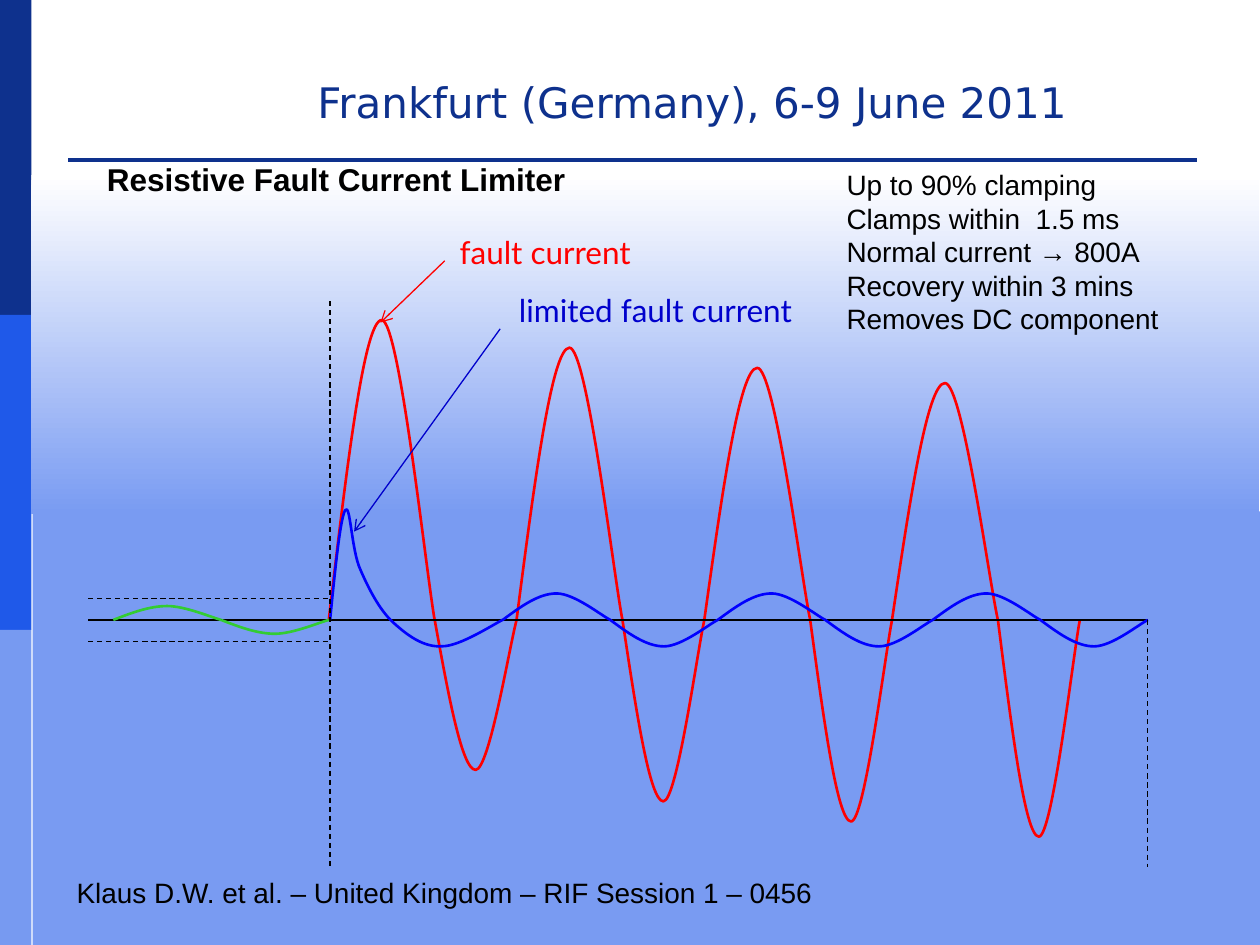
from dataclasses import dataclass
from itertools import chain

from lxml.etree import SubElement
from pptx import Presentation
from pptx.dml.color import RGBColor
from pptx.enum.dml import MSO_LINE
from pptx.enum.shapes import MSO_CONNECTOR, MSO_SHAPE
from pptx.oxml.ns import qn
from pptx.util import Inches, Pt

NAVY = RGBColor(0x0E, 0x31, 0x8D)
ROYAL = RGBColor(0x1F, 0x59, 0xE9)
SKY = RGBColor(0x77, 0x9A, 0xF1)
PANEL = RGBColor(0x79, 0x9B, 0xF2)
WHITE = RGBColor(0xFF, 0xFF, 0xFF)
BLACK = RGBColor(0, 0, 0)
RED = RGBColor(0xFF, 0, 0)
BLUE = RGBColor(0, 0, 0xFF)
DARK_BLUE = RGBColor(0, 0, 0xCC)
GREEN = RGBColor(0x33, 0xCC, 0x33)

BASE = 4.92
FAULT_X = 2.62
START_X, END_X = 0.7, 9.11
Point = tuple[float, float]


@dataclass
class Box:
    left: float
    top: float
    width: float
    height: float

    def emu(self) -> list[int]:
        return [Inches(v) for v in (self.left, self.top, self.width, self.height)]


@dataclass
class Label:
    box: Box
    text: str
    size: int
    font: str
    color: RGBColor
    bold: bool = False


@dataclass
class Line:
    start: Point
    end: Point
    color: RGBColor = BLACK
    width: float = 0.75
    dashed: bool = False
    arrow: bool = False


@dataclass
class HalfWave:
    left: float
    width: float
    peak: float
    color: RGBColor

    def points(self) -> list[Point]:
        steps = [(0, 0), (1 / 6, 1 / 2), (1 / 3, 1), (1 / 2, 1),
                 (2 / 3, 1), (11 / 12, 1 / 6), (1, 0)]
        return [(self.left + self.width * x, BASE + (self.peak - BASE) * y)
                for x, y in steps]


LABELS = [
    Label(Box(2.42, 0.56, 6.58, 0.5), "Frankfurt (Germany), 6-9 June 2011",
          24, "DejaVu Sans", NAVY),
    Label(Box(0.51, 6.9, 7.88, 0.37),
          "Klaus D.W. et al. – United Kingdom – RIF Session 1 – 0456",
          16, "Arial", BLACK),
    Label(Box(3.55, 1.8, 1.69, 0.4), "fault current", 18, "Lato", RED),
    Label(Box(4.02, 2.26, 2.58, 0.4), "limited fault current", 18, "Lato", DARK_BLUE),
    Label(Box(6.62, 1.28, 3.38, 1.45),
          "Up to 90% clamping\nClamps within  1.5 ms\nNormal current → 800A\n"
          "Recovery within 3 mins\nRemoves DC component", 16, "Arial", BLACK),
    Label(Box(0.75, 1.22, 5.35, 0.4), "Resistive Fault Current Limiter",
          18, "Arial", BLACK, True),
]

AXIS = Line((START_X, BASE), (END_X, BASE), width=1.5)
GUIDES = [
    Line((FAULT_X, 2.39), (FAULT_X, 6.88), dashed=True),
    Line((START_X, 4.75), (FAULT_X, 4.75), dashed=True),
    Line((START_X, 5.09), (FAULT_X, 5.09), dashed=True),
    Line((END_X, BASE), (END_X, 6.88), dashed=True),
]
POINTERS = [
    Line((3.53, 2.07), (3.02, 2.56), RED, arrow=True),
    Line((3.97, 2.61), (2.81, 4.22), DARK_BLUE, arrow=True),
]

FAULT_PEAKS = [(2.54, 6.11), (2.76, 6.36), (2.92, 6.52), (3.04, 6.64)]
FAULT_PERIOD, FAULT_RISE = 1.49, 0.84
FAULT_WAVES = list(chain.from_iterable(
    (HalfWave(2.61 + FAULT_PERIOD * i, FAULT_RISE, high, RED),
     HalfWave(2.61 + FAULT_PERIOD * i + FAULT_RISE, FAULT_PERIOD - FAULT_RISE, low, RED))
    for i, (high, low) in enumerate(FAULT_PEAKS)))
TRANSIENT = [
    (2.62, 4.92), (2.66, 4.52), (2.7, 4.12), (2.74, 4.05), (2.78, 3.98),
    (2.79, 4.37), (2.86, 4.52), (2.92, 4.66), (3.01, 4.84), (3.12, 4.94),
    (3.23, 5.04), (3.36, 5.14), (3.51, 5.13), (3.65, 5.13), (3.91, 4.96), (3.99, 4.92),
]


def sine(left: float, right: float, count: int, height: float,
         color: RGBColor) -> list[HalfWave]:
    width = (right - left) / count
    return [HalfWave(left + width * i, width, BASE - height * (-1) ** i, color)
            for i in range(count)]


def add_rect(shapes, box: Box, color: RGBColor):
    sp = shapes.add_shape(MSO_SHAPE.RECTANGLE, *box.emu())
    sp.shadow.inherit = False
    sp.line.fill.background()
    sp.fill.solid()
    sp.fill.fore_color.rgb = color
    return sp


def add_fade(shapes, box: Box, top: RGBColor, bottom: RGBColor) -> None:
    fill = add_rect(shapes, box, top).fill
    fill.gradient()
    fill.gradient_angle = 270
    for stop, color in zip(fill.gradient_stops, (top, bottom)):
        stop.color.rgb = color


def add_rule(shapes, box: Box, color: RGBColor) -> None:
    table = shapes.add_table(1, 1, *box.emu()).table
    table.first_row = table.horz_banding = False
    cell = table.cell(0, 0)
    cell.margin_left = cell.margin_right = cell.margin_top = cell.margin_bottom = 0
    SubElement(cell.text_frame.paragraphs[0]._p, qn("a:endParaRPr"), sz="100")
    tc_pr = cell._tc.get_or_add_tcPr()
    for side in ("L", "R", "T"):
        SubElement(SubElement(tc_pr, qn(f"a:ln{side}"), w="0"), qn("a:noFill"))
    border = SubElement(tc_pr, qn("a:lnB"), w=str(Pt(2.25)))
    SubElement(SubElement(border, qn("a:solidFill")), qn("a:srgbClr"), val=str(color))
    cell.fill.background()


def add_label(shapes, label: Label) -> None:
    tf = shapes.add_textbox(*label.box.emu()).text_frame
    tf.word_wrap = True
    tf.text = label.text
    for p in tf.paragraphs:
        for r in p.runs:
            r.font.size = Pt(label.size)
            r.font.name = label.font
            r.font.bold = label.bold
            r.font.color.rgb = label.color


def add_line(shapes, line: Line) -> None:
    ends = [Inches(v) for v in (*line.start, *line.end)]
    cxn = shapes.add_connector(MSO_CONNECTOR.STRAIGHT, *ends)
    cxn.line.color.rgb = line.color
    cxn.line.width = Pt(line.width)
    if line.dashed:
        cxn.line.dash_style = MSO_LINE.DASH
    if line.arrow:
        SubElement(cxn.line._get_or_add_ln(), qn("a:tailEnd"), type="arrow")
    SubElement(cxn._element.spPr, qn("a:effectLst"))


def add_curve(shapes, points: list[Point], color: RGBColor) -> None:
    start, *rest = [(Inches(x), Inches(y)) for x, y in points]
    builder = shapes.build_freeform(*start)
    builder.add_line_segments(rest, close=False)
    sp = builder.convert_to_shape()
    sp.shadow.inherit = False
    sp.fill.background()
    sp.line.color.rgb = color
    sp.line.width = Pt(1.5)
    outline = next(sp._element.iter(qn("a:moveTo"))).getparent()
    segments = outline.findall(qn("a:lnTo"))
    for i in range(0, len(segments), 3):
        bezier = SubElement(outline, qn("a:cubicBezTo"))
        for segment in segments[i:i + 3]:
            bezier.append(segment[0])
            outline.remove(segment)


def main() -> None:
    prs = Presentation()
    prs.slide_width, prs.slide_height = Inches(10), Inches(7.5)
    s = prs.slides.add_slide(prs.slide_layouts[6])
    shapes = s.shapes
    for i, color in enumerate((NAVY, ROYAL, SKY)):
        add_rect(shapes, Box(0, 2.5 * i, 0.25, 2.5), color)
    add_rule(shapes, Box(0.54, 1.07, 8.96, 0.2), NAVY)
    add_rect(shapes, Box(0.26, 4.06, 9.74, 3.44), PANEL)
    add_fade(shapes, Box(0.25, 1.39, 9.74, 2.69), WHITE, PANEL)
    for wave in FAULT_WAVES:
        add_curve(shapes, wave.points(), wave.color)
    add_line(shapes, AXIS)
    add_curve(shapes, TRANSIENT, BLUE)
    for wave in sine(3.99, END_X, 6, 0.21, BLUE) + sine(0.9, 2.61, 2, 0.11, GREEN):
        add_curve(shapes, wave.points(), wave.color)
    for line in GUIDES + POINTERS:
        add_line(shapes, line)
    for label in LABELS:
        add_label(shapes, label)
    prs.save("out.pptx")


if __name__ == "__main__":
    main()
